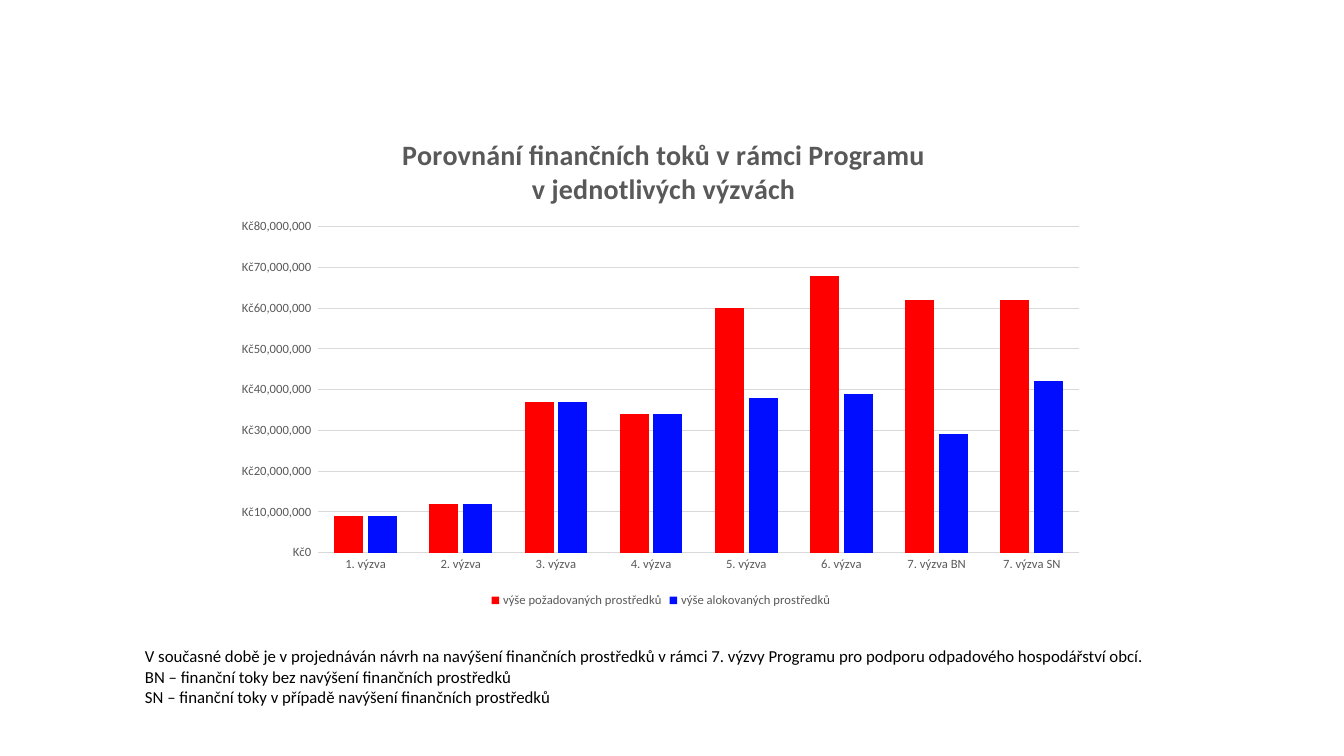
from dataclasses import dataclass

from lxml import etree
from pptx import Presentation
from pptx.chart.data import CategoryChartData
from pptx.dml.color import RGBColor
from pptx.enum import chart as ch, text
from pptx.oxml.ns import qn
from pptx.util import Pt

FONT = "Calibri"
COLORS = {"requested": "FF0000", "allocated": "000DFF", "label": "595959",
          "grid": "D9D9D9", "note": "000000"}
CURRENCY = '"Kč"#,##0_);[Red]\\("Kč"#,##0\\)'
MILLION = 1_000_000


@dataclass(frozen=True)
class Flow:
    name: str
    color: str
    millions: tuple[int, ...]


CALLS = [f"{n}. výzva" for n in range(1, 7)] + ["7. výzva BN", "7. výzva SN"]
FLOWS = [
    Flow("výše požadovaných prostředků", "requested", (9, 12, 37, 34, 60, 68, 62, 62)),
    Flow("výše alokovaných prostředků", "allocated", (9, 12, 37, 34, 38, 39, 29, 42)),
]
NOTES = [
    "V současné době je v projednáván návrh na navýšení finančních prostředků v rámci "
    "7. výzvy Programu pro podporu odpadového hospodářství obcí.",
    "BN – finanční toky bez navýšení finančních prostředků",
    "SN – finanční toky v případě navýšení finančních prostředků",
]


def rgb(key: str) -> RGBColor:
    return RGBColor.from_string(COLORS[key])


def style_font(font, size: float, color: str, bold: bool = False) -> None:
    font.name, font.size, font.bold = FONT, Pt(size), bold
    font.color.rgb = rgb(color)


def style_line(line) -> None:
    line.color.rgb = rgb("grid")
    line.width = Pt(0.75)


def set_layout(parent, index: int, **values: float | str) -> None:
    """Give a chart part a manual layout, as fractions of the chart."""
    for old in parent.findall(qn("c:layout")):
        parent.remove(old)
    layout = etree.Element(qn("c:layout"))
    manual = etree.SubElement(layout, qn("c:manualLayout"))
    for tag, value in values.items():
        etree.SubElement(manual, qn(f"c:{tag}")).set("val", str(value))
    parent.insert(index, layout)


def add_flow_chart(slide) -> None:
    data = CategoryChartData(number_format=CURRENCY)
    data.categories = CALLS
    for flow in FLOWS:
        data.add_series(flow.name, [value * MILLION for value in flow.millions])
    chart = slide.shapes.add_chart(
        ch.XL_CHART_TYPE.COLUMN_CLUSTERED, Pt(160.5), Pt(77), Pt(623), Pt(360), data
    ).chart
    style_font(chart.font, 10, "note")

    chart.has_title = True
    heading = chart.chart_title.text_frame.paragraphs[0]
    heading.text = "Porovnání finančních toků v rámci Programu\vv\u00a0jednotlivých výzvách"
    style_font(heading.font, 20, "label", bold=True)

    chart.has_legend = True
    chart.legend.position = ch.XL_LEGEND_POSITION.BOTTOM
    chart.legend.include_in_layout = False
    style_font(chart.legend.font, 9, "label")

    calls, amounts = chart.category_axis, chart.value_axis
    for axis in (calls, amounts):
        axis.major_tick_mark = axis.minor_tick_mark = ch.XL_TICK_MARK.NONE
        style_font(axis.tick_labels.font, 9, "label")
    style_line(calls.format.line)
    amounts.format.line.fill.background()
    style_line(amounts.major_gridlines.format.line)
    amounts.minimum_scale, amounts.maximum_scale = 0, 80 * MILLION
    amounts.major_unit = 10 * MILLION
    amounts.tick_labels.number_format = CURRENCY
    amounts.tick_labels.number_format_is_linked = False

    columns = chart.plots[0]
    columns.vary_by_categories = False
    columns.gap_width, columns.overlap = 112, -16
    for series, flow in zip(columns.series, FLOWS):
        series.format.fill.solid()
        series.format.fill.fore_color.rgb = rgb(flow.color)

    root = chart._chartSpace.find(qn("c:chart"))
    set_layout(root.find(qn("c:title")), 1, xMode="edge", yMode="edge", x=0.2, y=0.05)
    set_layout(root.find(qn("c:plotArea")), 0, layoutTarget="inner",
               xMode="edge", yMode="edge", x=0.107, y=0.236, w=0.873, h=0.647)


def add_notes(slide) -> None:
    frame = slide.shapes.add_textbox(Pt(96.5), Pt(458), Pt(734.5), Pt(72.5)).text_frame
    frame.word_wrap = False
    frame.auto_size = text.MSO_AUTO_SIZE.SHAPE_TO_FIT_TEXT
    frame.text = "\n".join(NOTES)
    for paragraph in frame.paragraphs:
        style_font(paragraph.font, 12, "note")


def main() -> None:
    deck = Presentation()
    deck.slide_width, deck.slide_height = Pt(960), Pt(540)
    slide = deck.slides.add_slide(deck.slide_layouts[6])
    add_flow_chart(slide)
    add_notes(slide)
    deck.save("out.pptx")


if __name__ == "__main__":
    main()
